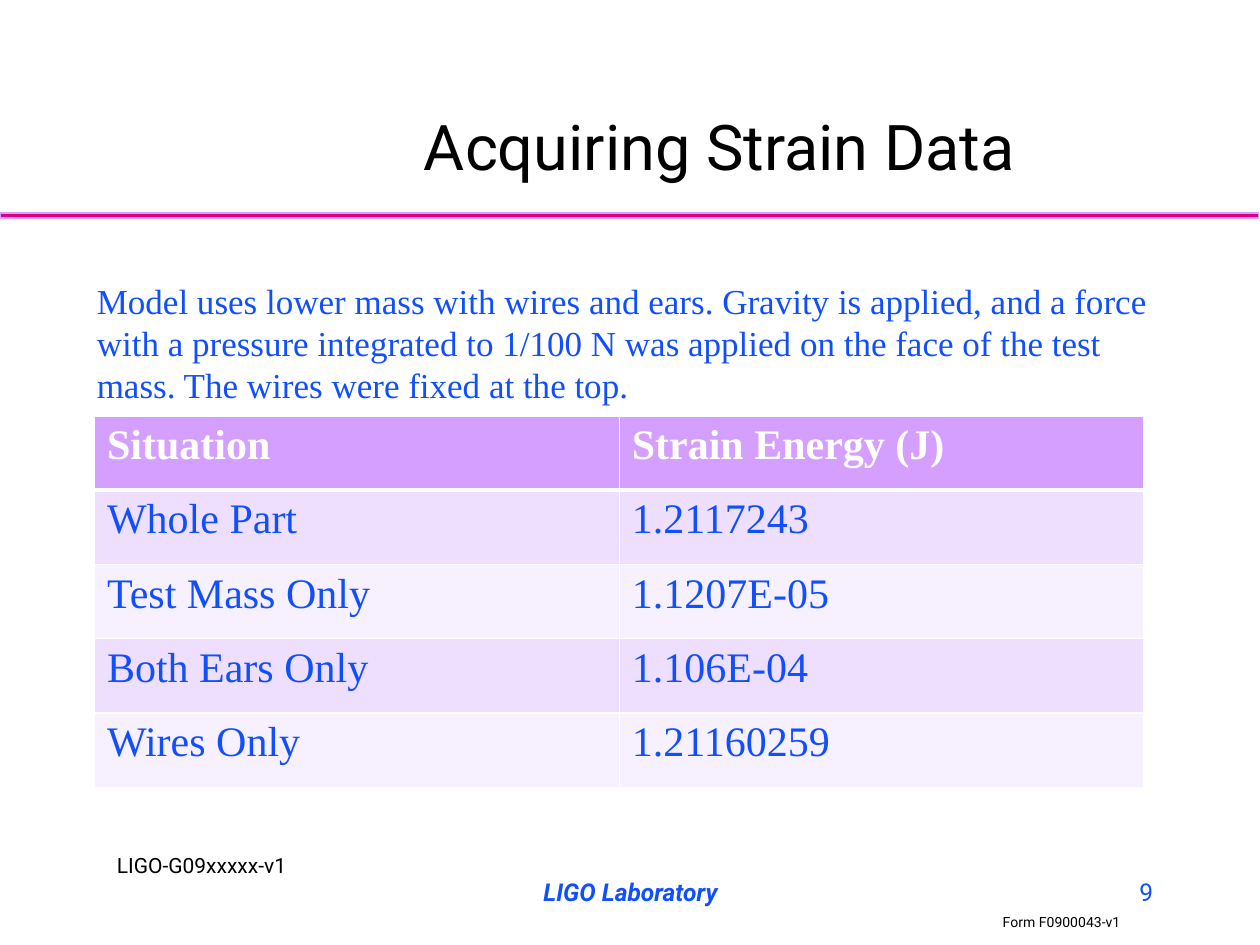
"""Build the strain data slide with its results table."""
from lxml import etree
from pptx import Presentation
from pptx import util as u
from pptx.dml.color import RGBColor
from pptx.enum import shapes, text
from pptx.oxml.ns import qn

COLORS = {"black": "000000", "white": "FFFFFF", "blue": "114FFB", "violet": "D49FFF",
          "magenta": "DC0081", "band": "EFDFFF", "pale": "F7F0FF"}
SANS, SERIF = "Roboto", "Times New Roman"
ALIGN, ANCHOR = text.PP_ALIGN, text.MSO_ANCHOR

TITLE = "Acquiring Strain Data"
BODY = ("Model uses lower mass with wires and ears. Gravity is applied, and a force "
        "with a pressure integrated to 1/100 N was applied on the face of the test mass. "
        "The wires were fixed at the top.")
ROWS = [
    ("Situation", "Strain Energy (J)"),
    ("Whole Part", "1.2117243"),
    ("Test Mass Only", "1.1207E-05"),
    ("Both Ears Only", "1.106E-04"),
    ("Wires Only", "1.21160259"),
]
TABLE_BOX = (0.75, 3.3, 8.33, 2.95)
LABELS = [
    ("LIGO-G09xxxxx-v1", (0.83, 6.72, 1.6, 0.3), ALIGN.LEFT, "black", {"size": 12}),
    ("Form F0900043-v1", (7.86, 7.17, 1.2, 0.3), ALIGN.LEFT, "black", {"size": 8}),
    ("LIGO Laboratory", (3.42, 6.83, 3.17, 0.5), ALIGN.CENTER, "blue",
     {"size": 14, "bold": True, "italic": True}),
    ("9", (7.17, 6.83, 2.08, 0.5), ALIGN.RIGHT, "blue", {"size": 14}),
]


def rgb(name):
    return RGBColor.from_string(COLORS[name])


def inches(box):
    return [u.Inches(v) for v in box]


def write(tf, words, color, size, align=ALIGN.LEFT, **fmt):
    p = tf.paragraphs[0]
    p.alignment = align
    r = p.add_run()
    r.text = words
    r.font.color.rgb = rgb(color)
    for key, value in {"name": SANS, "size": u.Pt(size), **fmt}.items():
        setattr(r.font, key, value)
    return p


def add_text(s, box, words, color, wrap=False, anchor=ANCHOR.MIDDLE, **fmt):
    tf = s.shapes.add_textbox(*inches(box)).text_frame
    tf.word_wrap, tf.vertical_anchor = wrap, anchor
    return write(tf, words, color, **fmt)


def set_borders(cell, widths):
    tc_pr = cell._tc.get_or_add_tcPr()
    for i, (side, width) in enumerate(widths.items()):
        ln = etree.Element(qn(f"a:ln{side}"), w=str(u.Pt(width)))
        fill = etree.SubElement(ln, qn("a:solidFill"))
        etree.SubElement(fill, qn("a:srgbClr"), val=COLORS["white"])
        tc_pr.insert(i, ln)


def add_results(s):
    n_rows, n_cols = len(ROWS), len(ROWS[0])
    table = s.shapes.add_table(n_rows, n_cols, *inches(TABLE_BOX)).table
    for i, row in enumerate(ROWS):
        table.rows[i].height = u.Inches(TABLE_BOX[3] / n_rows)
        head = i == 0
        fill = "violet" if head else ("pale", "band")[i % 2]
        for j, words in enumerate(row):
            cell = table.cell(i, j)
            cell.fill.solid()
            cell.fill.fore_color.rgb = rgb(fill)
            set_borders(cell, {"L": 1, "R": 1, "T": 3 if i == 1 else 1, "B": 3 if head else 1})
            write(cell.text_frame, words, "white" if head else "blue", 24,
                  name=SERIF, bold=head)


def main():
    prs = Presentation()
    prs.slide_width, prs.slide_height = u.Inches(10), u.Inches(7.5)
    s = prs.slides.add_slide(prs.slide_layouts[5])

    rule = s.shapes.add_shape(shapes.MSO_SHAPE.RECTANGLE, *inches((0, 1.69, 9.99, 0.04)))
    rule.shadow.inherit = False
    rule.fill.solid()
    rule.fill.fore_color.rgb = rgb("magenta")
    rule.line.color.rgb = rgb("violet")
    rule.line.width = u.Pt(0.75)

    title = s.shapes.title
    title.left, title.top, title.width, title.height = inches((1.75, 0.25, 7.92, 1.25))
    title.text_frame.vertical_anchor = ANCHOR.BOTTOM
    write(title.text_frame, TITLE, "black", 36, ALIGN.CENTER)

    add_results(s)
    for words, box, align, color, fmt in LABELS:
        add_text(s, box, words, color, align=align, **fmt)
    p = add_text(s, (0.67, 2.17, 8.83, 1.11), BODY, "blue", wrap=True,
                 anchor=ANCHOR.TOP, size=20, name=SERIF)
    p.line_spacing = u.Pt(24)
    prs.save("out.pptx")


if __name__ == "__main__":
    main()
